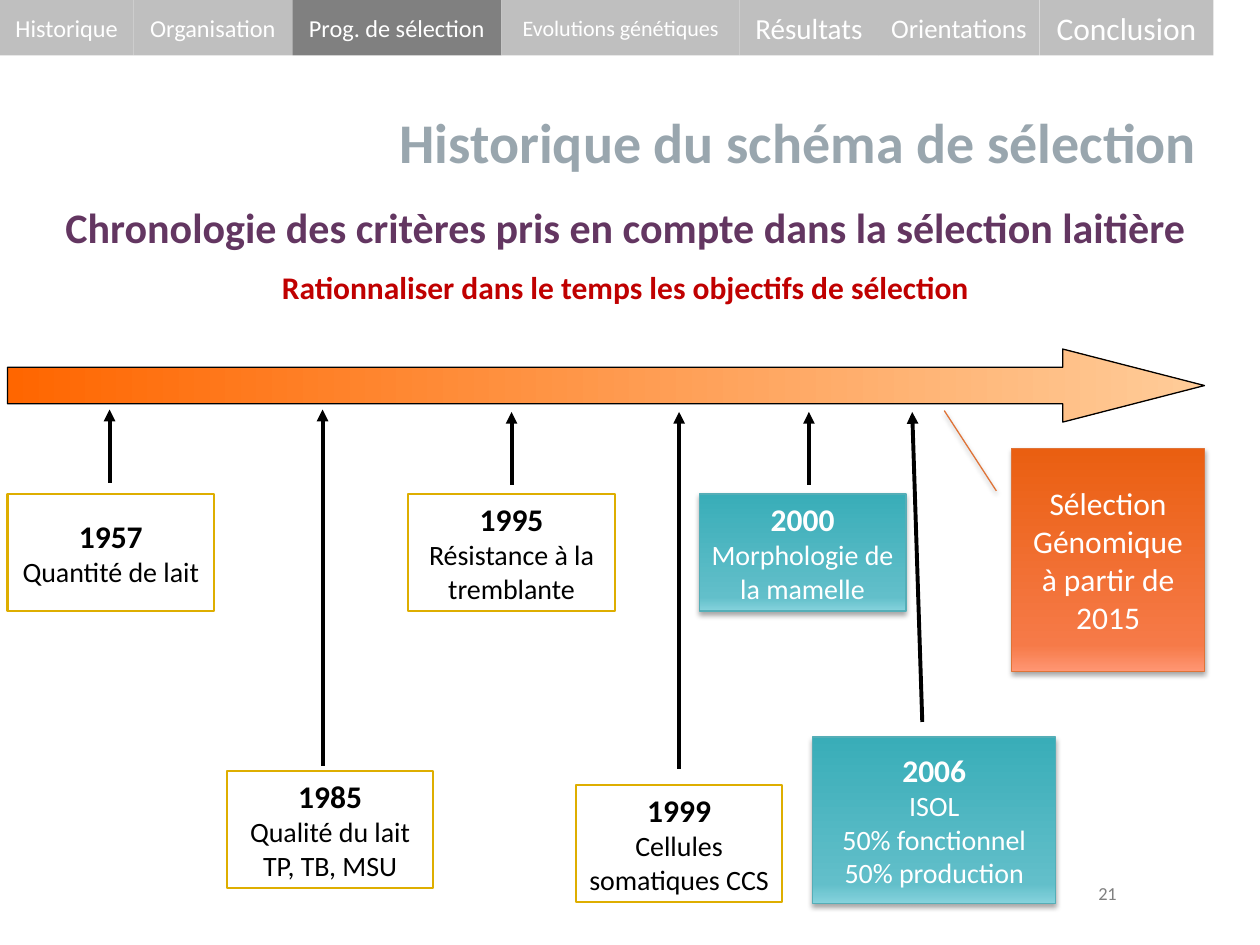
from lxml import etree
from pptx import Presentation
from pptx.dml.color import RGBColor
from pptx.enum.shapes import MSO_CONNECTOR, MSO_SHAPE
from pptx.enum.text import MSO_ANCHOR, PP_ALIGN
from pptx.oxml.ns import qn
from pptx.util import Inches, Pt

RECTANGLE = MSO_SHAPE.RECTANGLE
RIGHT_ARROW = MSO_SHAPE.RIGHT_ARROW
CALLOUT = MSO_SHAPE.LINE_CALLOUT_1
STRAIGHT = MSO_CONNECTOR.STRAIGHT
MIDDLE = MSO_ANCHOR.MIDDLE
TOP = MSO_ANCHOR.TOP
CENTER = PP_ALIGN.CENTER
RIGHT = PP_ALIGN.RIGHT

FONT = "Calibri"
BLACK = RGBColor(0x00, 0x00, 0x00)
WHITE = RGBColor(0xFF, 0xFF, 0xFF)
LIGHT_GREY = RGBColor(0xBF, 0xBF, 0xBF)
DARK_GREY = RGBColor(0x80, 0x80, 0x80)
TITLE_GREY = RGBColor(0x99, 0xA6, 0xAE)
PURPLE = RGBColor(0x63, 0x36, 0x61)
RED = RGBColor(0xC0, 0x00, 0x00)
GOLD = RGBColor(0xDE, 0xAE, 0x00)
TEAL_LINE = RGBColor(0x55, 0xAE, 0xB7)
ORANGE_LINE = RGBColor(0xDF, 0x73, 0x37)
TEAL_STOPS = (
    (0, RGBColor(0x85, 0xD2, 0xDC)),
    (12, RGBColor(0x62, 0xBF, 0xCA)),
    (100, RGBColor(0x39, 0xAD, 0xB8)),
)
ORANGE_STOPS = (
    (0, RGBColor(0xFF, 0x96, 0x73)),
    (12, RGBColor(0xF6, 0x7A, 0x48)),
    (100, RGBColor(0xEA, 0x5F, 0x11)),
)
ARROW_STOPS = (
    (0, RGBColor(0xFF, 0x66, 0x00)),
    (100, RGBColor(0xFF, 0xCC, 0x99)),
)

NAVIGATION = (
    ("Historique", 1.06, 13.9),
    ("Organisation", 1.26, 13.9),
    ("Prog. de sélection", 1.66, 13.9),
    ("Evolutions génétiques", 1.89, 12.6),
    ("Résultats", 1.1, 16.6),
    ("Orientations", 1.28, 15.3),
    ("Conclusion", 1.38, 18),
)
ACTIVE_TAB = "Prog. de sélection"
POINTERS = (
    (0.87, 3.25, 0.87, 3.83),
    (2.56, 3.25, 2.56, 6.08),
    (4.06, 3.27, 4.06, 3.85),
    (5.39, 3.27, 5.39, 6.1),
    (6.42, 3.27, 6.42, 3.85),
    (7.24, 3.27, 7.32, 5.73),
)
PLAIN_MILESTONES = (
    (0.06, 3.92, "1957\nQuantité de lait"),
    (1.8, 6.12, "1985\nQualité du lait\nTP, TB, MSU"),
    (3.24, 3.92, "1995\nRésistance à la tremblante"),
    (4.57, 6.23, "1999\nCellules somatiques CCS"),
)
TEAL_MILESTONES = (
    (5.55, 3.92, 1.64, 0.93, "2000\nMorphologie de la mamelle"),
    (6.45, 5.85, 1.93, 1.32, "2006\nISOL\n50% fonctionnel\n50% production"),
)


def style_paragraph(paragraph, size, color, bold=False, alignment=CENTER):
    """Set the alignment and font of a paragraph's runs."""
    paragraph.alignment = alignment
    for run in paragraph.runs:
        run.font.name = FONT
        run.font.size = Pt(size)
        run.font.bold = bold
        run.font.color.rgb = color


def write_text(shape, text, size, color, bold=False, alignment=CENTER, anchor=MIDDLE):
    """Write uniformly styled text into a shape."""
    text_frame = shape.text_frame
    text_frame.word_wrap = True
    text_frame.vertical_anchor = anchor
    text_frame.text = text
    for paragraph in text_frame.paragraphs:
        style_paragraph(paragraph, size, color, bold, alignment)


def write_milestone(shape, text, color):
    """Write a bold year followed by its selection criteria."""
    write_text(shape, text, 16, color)
    style_paragraph(shape.text_frame.paragraphs[0], 18, color, bold=True)


def add_box(slide, kind, bounds, fill=None, line=None, line_width=0.75):
    """Add a preset shape without shadow, with optional solid fill and line."""
    shape = slide.shapes.add_shape(kind, *map(Inches, bounds))
    shape.shadow.inherit = False
    if fill is not None:
        shape.fill.solid()
        shape.fill.fore_color.rgb = fill
    if line is None:
        shape.line.fill.background()
    else:
        shape.line.color.rgb = line
        shape.line.width = Pt(line_width)
    return shape


def apply_gradient(shape, stops, angle):
    """Fill a shape with a linear gradient through the given stops."""
    shape.fill.gradient()
    shape.fill.gradient_angle = angle
    stop_list = shape._element.spPr.find(qn("a:gradFill")).find(qn("a:gsLst"))
    for old_stop in list(stop_list):
        stop_list.remove(old_stop)
    for position, color in stops:
        stop = etree.SubElement(stop_list, qn("a:gs"), pos=str(position * 1000))
        etree.SubElement(stop, qn("a:srgbClr"), val=str(color))


def add_glossy_box(slide, kind, bounds, stops, line):
    """Add a vertically shaded shape with a soft shadow below it."""
    shape = add_box(slide, kind, bounds, line=line)
    apply_gradient(shape, stops, 90)
    effects = shape._element.spPr.find(qn("a:effectLst"))
    shadow = etree.SubElement(
        effects, qn("a:outerShdw"), blurRad=str(Pt(3.1)), dist=str(Pt(1.8)),
        dir="5400000", rotWithShape="0",
    )
    color = etree.SubElement(shadow, qn("a:srgbClr"), val=str(BLACK))
    etree.SubElement(color, qn("a:alpha"), val="35000")
    return shape


def add_pointer(slide, ends):
    """Add a black line whose start carries a triangular arrowhead."""
    connector = slide.shapes.add_connector(STRAIGHT, *map(Inches, ends))
    connector.line.color.rgb = BLACK
    connector.line.width = Pt(2.25)
    line = connector.line._get_or_add_ln()
    etree.SubElement(line, qn("a:headEnd"), type="triangle")
    etree.SubElement(connector._element.spPr, qn("a:effectLst"))


def add_navigation(slide):
    """Add the row of section tabs along the top edge."""
    left = 0
    for label, width, size in NAVIGATION:
        fill = DARK_GREY if label == ACTIVE_TAB else LIGHT_GREY
        tab = add_box(slide, RECTANGLE, (left, 0, width, 0.44), fill)
        write_text(tab, label, size, WHITE)
        left += width


def add_headings(slide):
    """Add the title, the two subtitles and the page number."""
    title = slide.shapes.add_textbox(*map(Inches, (-0.02, 0.44, 9.62, 1.36)))
    write_text(title, "Historique du schéma de sélection", 32, TITLE_GREY, True, RIGHT)

    subtitles = slide.shapes.add_textbox(*map(Inches, (0.2, 1.55, 9.53, 0.96)))
    text = (
        "Chronologie des critères pris en compte dans la sélection laitière\n"
        "Rationnaliser dans le temps les objectifs de sélection"
    )
    write_text(subtitles, text, 24, PURPLE, True, anchor=TOP)
    objective = subtitles.text_frame.paragraphs[1]
    style_paragraph(objective, 18, RED, bold=True)
    objective.space_before = Pt(9)

    number = slide.shapes.add_textbox(*map(Inches, (8.5, 7, 0.58, 0.17)))
    frame = number.text_frame
    frame.margin_top = frame.margin_bottom = 0
    write_text(number, "21", 10.5, DARK_GREY)


def add_timeline(slide):
    """Add the time arrow, its pointers, the milestones and the callout."""
    arrow = add_box(slide, RIGHT_ARROW, (0.06, 2.77, 9.5, 0.58), line=BLACK)
    arrow.adjustments[1] = 1.94
    apply_gradient(arrow, ARROW_STOPS, 0)
    for ends in POINTERS:
        add_pointer(slide, ends)
    for left, top, text in PLAIN_MILESTONES:
        box = add_box(slide, RECTANGLE, (left, top, 1.64, 0.93), WHITE, GOLD, 1.25)
        write_milestone(box, text, BLACK)
    for *bounds, text in TEAL_MILESTONES:
        box = add_glossy_box(slide, RECTANGLE, bounds, TEAL_STOPS, TEAL_LINE)
        write_milestone(box, text, WHITE)
    callout = add_glossy_box(
        slide, CALLOUT, (8.03, 3.56, 1.53, 1.77), ORANGE_STOPS, ORANGE_LINE
    )
    for index, value in enumerate((0.19, -0.08, -0.17, -0.35)):
        callout.adjustments[index] = value
    write_text(callout, "Sélection Génomique à partir de 2015", 18, WHITE)


def main():
    """Build the slide and save it."""
    presentation = Presentation()
    presentation.slide_width = Inches(10)
    presentation.slide_height = Inches(7.5)
    slide = presentation.slides.add_slide(presentation.slide_layouts[6])
    add_timeline(slide)
    add_navigation(slide)
    add_headings(slide)
    presentation.save("out.pptx")


if __name__ == "__main__":
    main()
